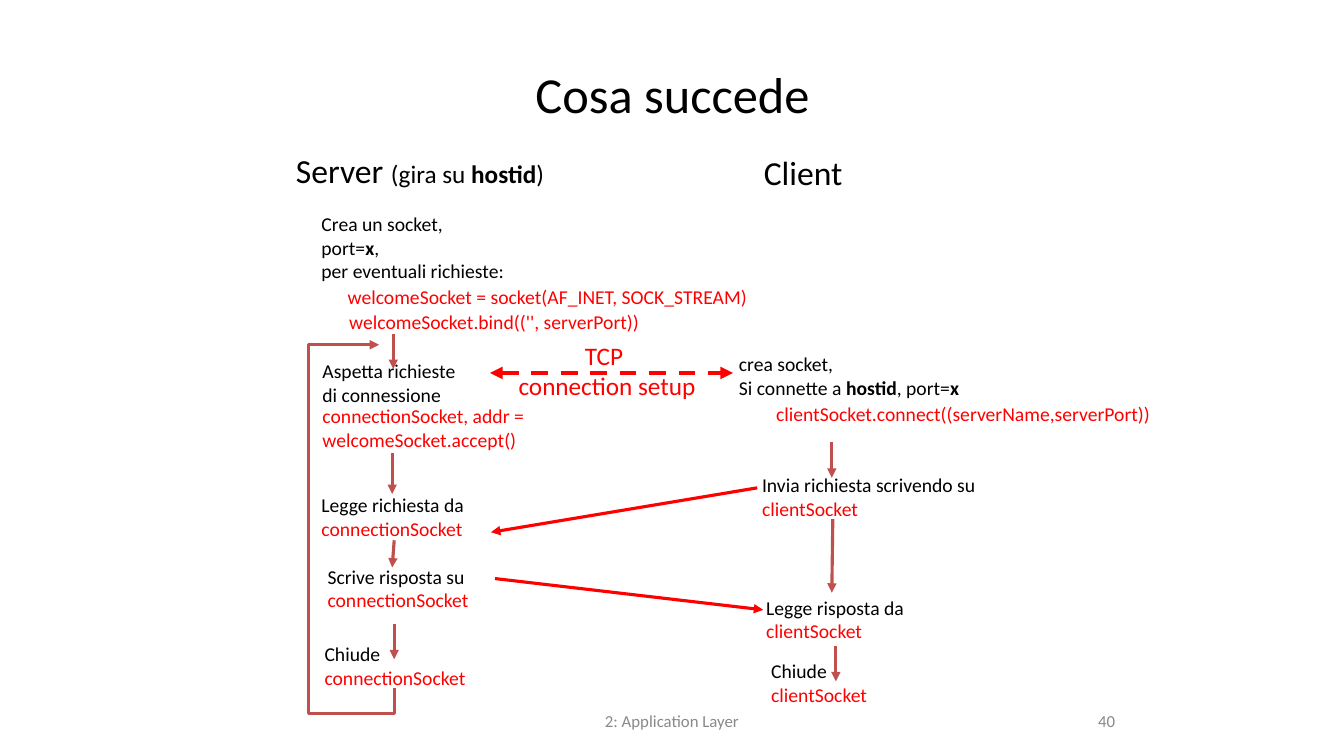
from typing import NamedTuple

from lxml.etree import SubElement
from pptx import Presentation
from pptx.dml.color import RGBColor
from pptx.enum.dml import MSO_LINE
from pptx.enum.shapes import MSO_CONNECTOR
from pptx.enum.text import MSO_ANCHOR as Anchor, PP_ALIGN as Align
from pptx.oxml.ns import qn
from pptx.util import Pt

PX = 9144
FONT = "Calibri"
BLACK = RGBColor(0x00, 0x00, 0x00)
RED = RGBColor(0xFF, 0x00, 0x00)
BRICK = RGBColor(0xC0, 0x50, 0x4D)
GRAY = RGBColor(0x89, 0x89, 0x89)


class Box(NamedTuple):
    left: int
    top: int
    width: int
    height: int

    def inner(self, left, top, width, height):
        return Box(self.left + left, self.top + top, width, height)

    def point(self, x, y):
        return (self.left + x) * PX, (self.top + y) * PX


def write(page, box, lines, size=14, align=Align.LEFT, anchor=Anchor.MIDDLE, wrap=False):
    shape = page.shapes.add_textbox(*(length * PX for length in box))
    frame = shape.text_frame
    frame.word_wrap = wrap
    frame.vertical_anchor = anchor
    for index, (colour, *spans) in enumerate(lines):
        para = frame.paragraphs[0] if index == 0 else frame.add_paragraph()
        para.alignment = align
        para.font.name = FONT
        para.font.size = Pt(size)
        para.font.color.rgb = colour
        for order, text in enumerate(spans):
            span = para.add_run()
            span.text = text
            if order % 2:
                span.font.bold = True
    return frame


def write_code(page, box, *lines, align=Align.RIGHT):
    write(page, box, [(RED, line) for line in lines],
          align=align, anchor=Anchor.TOP, wrap=True)


def write_step(page, box, action, socket):
    write(page, box, [(BLACK, action), (RED, socket)])


def style_line(shape, colour, width, ends=("tailEnd",), dash=None):
    shape.line.color.rgb = colour
    shape.line.width = Pt(width)
    if dash is not None:
        shape.line.dash_style = dash
    outline = shape._element.spPr.find(qn("a:ln"))
    for end in ends:
        SubElement(outline, qn(f"a:{end}"), type="triangle")


def draw_arrow(page, start, finish, colour=BRICK, width=2.25, **style):
    arrow = page.shapes.add_connector(MSO_CONNECTOR.STRAIGHT, *start, *finish)
    style_line(arrow, colour, width, **style)
    SubElement(arrow._element.spPr, qn("a:effectLst"))


def draw_loop(page, points):
    builder = page.shapes.build_freeform(*points[0], scale=1.0)
    builder.add_line_segments(points[1:], close=False)
    loop = builder.convert_to_shape()
    loop.fill.background()
    style_line(loop, BRICK, 2.25)
    loop.shadow.inherit = False


def add_title(page, box):
    title = page.shapes.title
    title.left, title.top, title.width, title.height = (length * PX for length in box)
    title.text_frame.text = "Cosa succede"
    title.text_frame.vertical_anchor = Anchor.MIDDLE
    para = title.text_frame.paragraphs[0]
    para.alignment = Align.CENTER
    para.font.name = FONT
    para.font.size = Pt(36)
    para.font.color.rgb = BLACK


def add_server(page, box):
    heading = write(page, box.inner(2, 3, 269, 51),
                    [(BLACK, "Server (gira su ", "hostid", ")")],
                    size=18, align=Align.CENTER)
    server, *others = heading.paragraphs[0].runs
    server.text = "Server "
    server.font.size = Pt(24)
    label = heading.paragraphs[0].add_run()
    label.text = "(gira su "
    server._r.addnext(label._r)
    write(page, box.inner(29, 65, 203, 81), [
        (BLACK, "Crea un socket,"),
        (BLACK, "port=", "x", ","),
        (BLACK, "per eventuali richieste:"),
    ])
    write(page, box.inner(30, 211, 154, 57),
          [(BLACK, "Aspetta richieste"), (BLACK, "di connessione")])
    write_code(page, box.inner(-14, 138, 485, 80),
               "welcomeSocket = socket(AF_INET, SOCK_STREAM)")
    write_code(page, box.inner(30, 163, 334, 57), "welcomeSocket.bind(('', serverPort))")
    write_code(page, box.inner(30, 256, 459, 56), "connectionSocket, addr =",
               "welcomeSocket.accept()", align=Align.LEFT)
    for left, top, width, action in (
        (29, 344, 163, "Legge richiesta da"),
        (35, 415, 161, "Scrive risposta su"),
        (32, 492, 161, "Chiude"),
    ):
        write_step(page, box.inner(left, top, width, 57), action, "connectionSocket")
    for x, top, end_x, bottom in (
        (110, 191, 110, 226), (109, 309, 109, 350),
        (111, 396, 109, 423), (111, 479, 111, 514),
    ):
        draw_arrow(page, box.point(x, top), box.point(end_x, bottom))
    corners = (111, 543), (111, 568), (26, 568), (26, 202), (96, 202)
    draw_loop(page, [box.point(*corner) for corner in corners])


def add_client(page, box):
    write(page, box.inner(27, 5, 99, 51), [(BLACK, "Client")], size=24, align=Align.CENTER)
    write(page, box.inner(3, 204, 241, 57), [
        (BLACK, "crea socket,"),
        (BLACK, "Si connette a ", "hostid", ", port=", "x"),
    ])
    write_code(page, box.inner(-83, 254, 514, 33),
               "clientSocket.connect((serverName,serverPort))")
    for left, top, width, action in (
        (26, 324, 234, "Invia richiesta scrivendo su"),
        (30, 446, 158, "Legge risposta da"),
        (35, 509, 116, "Chiude"),
    ):
        write_step(page, box.inner(left, top, width, 57), action, "clientSocket")
    for x, top, end_x, bottom in (
        (105, 299, 105, 334), (106, 375, 105, 448), (109, 501, 109, 536),
    ):
        draw_arrow(page, box.point(x, top), box.point(end_x, bottom))


def add_exchange(page, box):
    draw_arrow(page, box.point(6, 50), box.point(247, 50), RED, 3,
               ends=("headEnd", "tailEnd"), dash=MSO_LINE.DASH)
    write(page, box.inner(23, 12, 198, 71), [(RED, "TCP "), (RED, "connection setup")],
          size=18, align=Align.CENTER)
    draw_arrow(page, box.point(271, 164), box.point(7, 208), RED)
    draw_arrow(page, box.point(11, 254), box.point(277, 285), RED)


def add_footer(page, box):
    write(page, box.inner(0, 0, 317, 40), [(GRAY, "2: Application Layer")],
          size=12, align=Align.CENTER, wrap=True)
    write(page, box.inner(375, 0, 233, 40), [(GRAY, "40")],
          size=12, align=Align.RIGHT, wrap=True)


def main():
    deck = Presentation()
    deck.slide_width = 1333 * PX
    deck.slide_height = 750 * PX
    page = deck.slides.add_slide(deck.slide_layouts[5])
    add_title(page, Box(217, 30, 900, 125))
    add_server(page, Box(280, 140, 480, 570))
    add_client(page, Box(720, 140, 440, 570))
    add_exchange(page, Box(480, 320, 280, 290))
    add_footer(page, Box(508, 695, 608, 40))
    deck.save("out.pptx")


if __name__ == "__main__":
    main()
